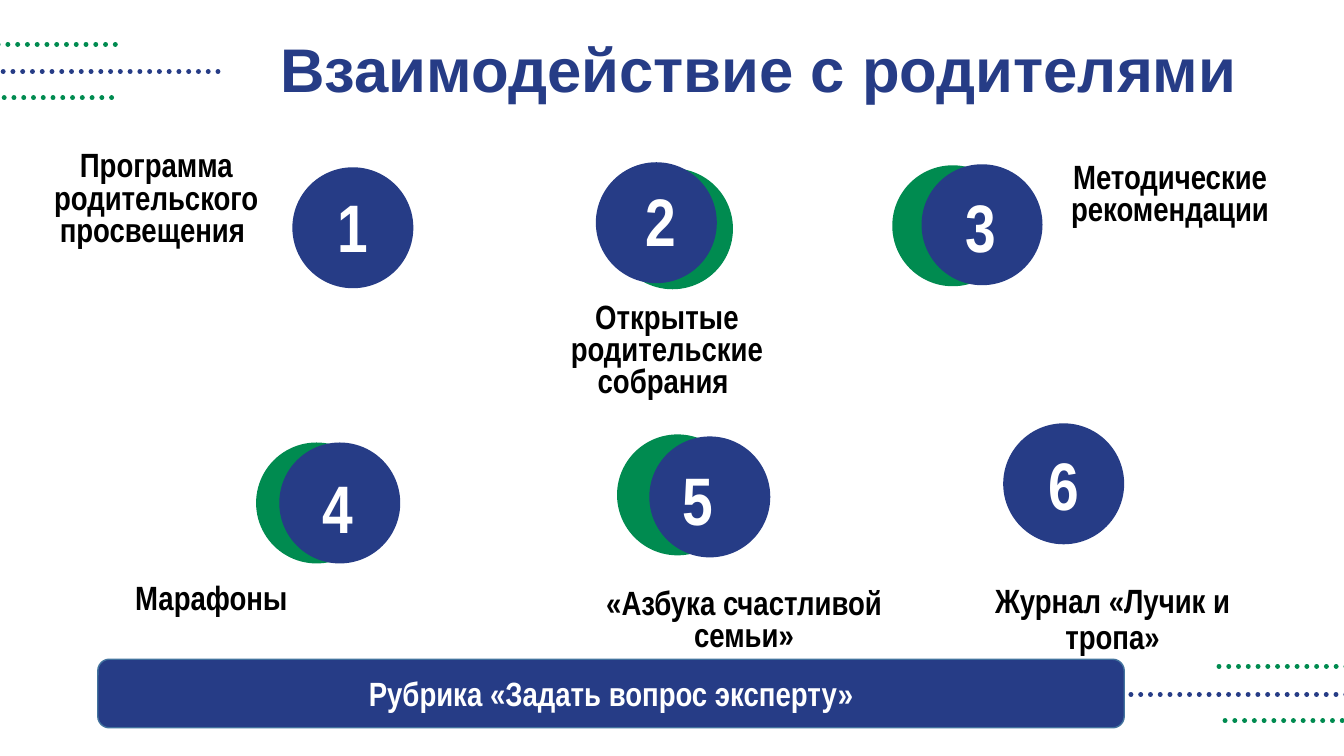
from lxml import etree
from pptx import Presentation
from pptx.dml.color import RGBColor
from pptx.enum.dml import MSO_LINE
from pptx.enum.shapes import MSO_CONNECTOR, MSO_SHAPE
from pptx.enum.text import MSO_ANCHOR, MSO_AUTO_SIZE, PP_ALIGN
from pptx.oxml.ns import qn
from pptx.util import Pt

PX = 9144
BLUE, GREEN, WHITE, BLACK = "263C86", "008B50", "FFFFFF", "000000"
NARROW = "Arial Narrow"
DIAMETER = 120


def color(value):
    return RGBColor.from_string(value)


def write(sp, text, size, font, fill, align=PP_ALIGN.CENTER, spacing=None):
    tf = sp.text_frame
    tf.word_wrap = True
    p = tf.paragraphs[0]
    p.alignment = align
    if spacing:
        p.line_spacing = spacing
    r = p.add_run()
    r.text = text
    r.font.size = Pt(size)
    r.font.name = font
    r.font.bold = True
    r.font.color.rgb = color(fill)


prs = Presentation()
prs.slide_width, prs.slide_height = 1333 * PX, 750 * PX
s = prs.slides.add_slide(prs.slide_layouts[6])

circles = [
    (612, 431, GREEN, ""), (644, 433, BLUE, ""),
    (254, 439, GREEN, ""), (277, 439, BLUE, ""),
    (885, 164, GREEN, ""), (914, 163, BLUE, ""),
    (607, 167, GREEN, ""), (591, 161, BLUE, ""),
    (290, 166, BLUE, ""), (995, 420, BLUE, "6"),
]
for x, y, fill, number in circles:
    sp = s.shapes.add_shape(MSO_SHAPE.OVAL, x * PX, y * PX, DIAMETER * PX, DIAMETER * PX)
    sp.shadow.inherit = False
    sp.fill.solid()
    sp.fill.fore_color.rgb = color(fill)
    sp.line.fill.background()
    if number:
        sp.text_frame.vertical_anchor = MSO_ANCHOR.MIDDLE
        write(sp, number, 48, NARROW, WHITE)

numbers = [
    ("1", 325, 179, 60), ("2", 630, 173, 52), ("3", 948, 179, 50),
    ("4", 310, 458, 42), ("5", 667, 450, 60),
]
for number, x, y, w in numbers:
    sp = s.shapes.add_textbox(x * PX, y * PX, w * PX, 91 * PX)
    write(sp, number, 48, NARROW, WHITE, PP_ALIGN.LEFT)
    sp.text_frame.auto_size = MSO_AUTO_SIZE.SHAPE_TO_FIT_TEXT

labels = [
    ("Взаимодействие с родителями ", 264, 26, 978, 84, 44, "Arial", BLUE, None),
    ("Программа родительского просвещения ", 0, 146, 310, 107, 24, NARROW, BLACK, 0.8),
    ("Открытые родительские собрания ", 496, 296, 331, 107, 24, NARROW, BLACK, 0.8),
    ("Методические рекомендации", 1042, 157, 237, 75, 24, NARROW, BLACK, 0.8),
    ("Марафоны ", 30, 575, 367, 42, 24, NARROW, BLACK, 0.8),
    ("«Азбука счастливой семьи»", 591, 580, 294, 75, 24, NARROW, BLACK, 0.8),
    ("Журнал «Лучик и тропа»", 965, 575, 277, 83, 24, NARROW, BLACK, 0.9),
]
for text, x, y, w, h, size, font, fill, spacing in labels:
    sp = s.shapes.add_textbox(x * PX, y * PX, w * PX, h * PX)
    write(sp, text, size, font, fill, spacing=spacing)
    sp.text_frame.auto_size = MSO_AUTO_SIZE.SHAPE_TO_FIT_TEXT

dotted_lines = [
    (1209, 1389, 661, GREEN), (1112, 1389, 689, BLUE), (1215, 1389, 715, GREEN),
    (-60, 119, 44, GREEN), (-55, 222, 71, BLUE), (-54, 119, 97, GREEN),
]
for x1, x2, y, fill in dotted_lines:
    line = s.shapes.add_connector(MSO_CONNECTOR.STRAIGHT, x1 * PX, y * PX, x2 * PX, y * PX)
    line.line.color.rgb = color(fill)
    line.line.width = Pt(3.5)
    line.line.dash_style = MSO_LINE.ROUND_DOT
    props = line._element.spPr
    props.find(qn("a:ln")).set("cap", "rnd")
    etree.SubElement(props, qn("a:effectLst"))

banner = s.shapes.add_shape(MSO_SHAPE.ROUNDED_RECTANGLE, 97 * PX, 654 * PX, 1018 * PX, 68 * PX)
banner.shadow.inherit = False
banner.fill.solid()
banner.fill.fore_color.rgb = color(BLUE)
banner.line.color.rgb = color("43739E")
banner.line.width = Pt(1)
banner.text_frame.vertical_anchor = MSO_ANCHOR.MIDDLE
write(banner, "Рубрика «Задать вопрос эксперту»", 24, NARROW, WHITE)

prs.save("out.pptx")
